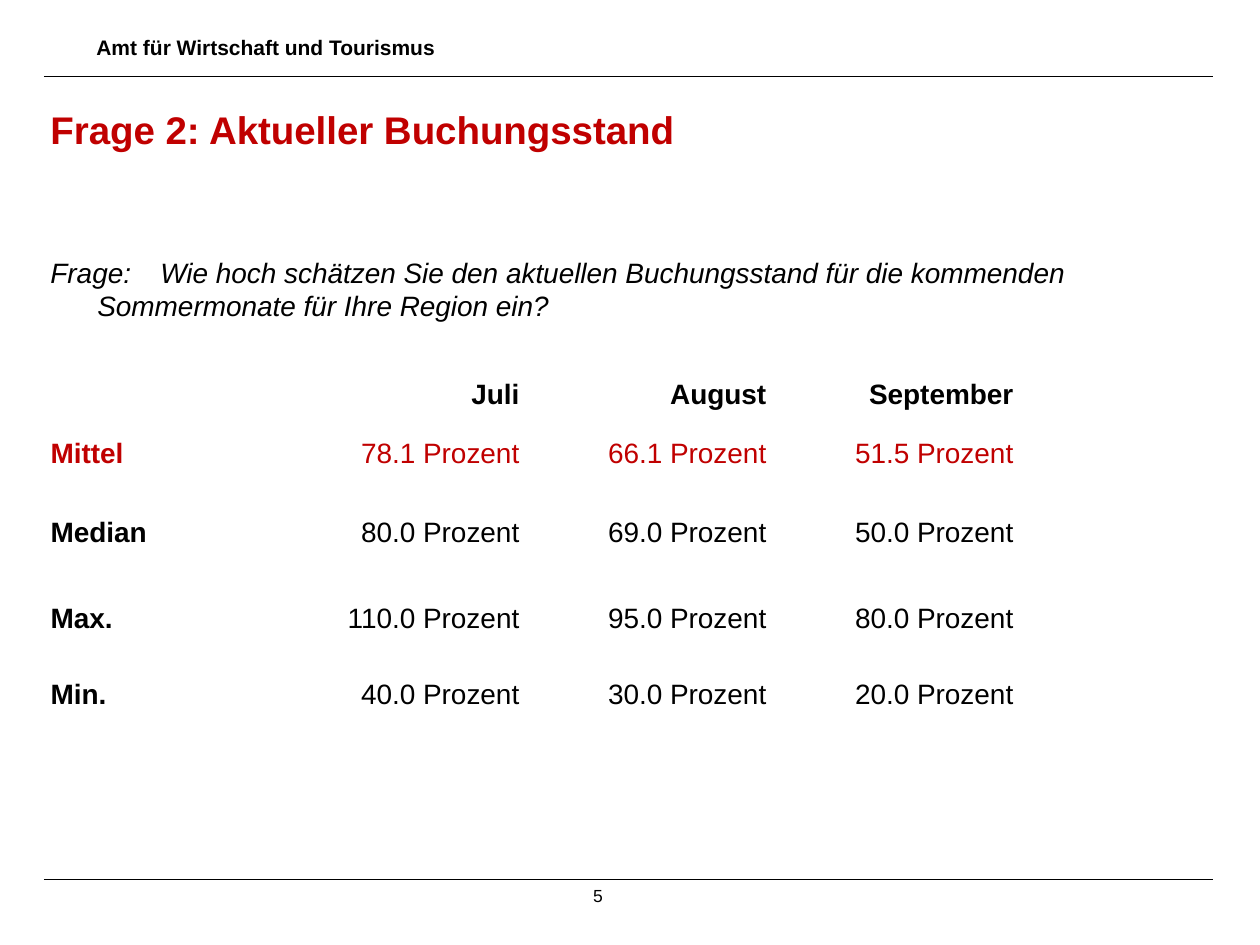
from lxml import etree
from pptx import Presentation, util as u
from pptx.dml.color import RGBColor
from pptx.enum import shapes, text
from pptx.oxml.ns import qn

SCALE = 914400 // 126
BLACK, RED = "000000", "C00000"
LEFT, WIDTH = 38, 1168
MONTHS = ["", "Juli", "August", "September"]
STATS = [
    ("Mittel", "78.1", "66.1", "51.5"),
    ("Median", "80.0", "69.0", "50.0"),
    ("Max.", "110.0", "95.0", "80.0"),
    ("Min.", "40.0", "30.0", "20.0"),
]
HEIGHTS = [59, 79, 86, 76, 76]


def px(n):
    return u.Emu(n * SCALE)


def color(code):
    return RGBColor.from_string(code)


def add_run(para, words, size, tint=BLACK, bold=False, italic=False):
    run = para.add_run()
    run.text = words
    font = run.font
    font.name, font.size = "Arial", u.Pt(size)
    font.bold, font.italic = bold, italic
    font.color.rgb = color(tint)


def add_text(slide, box, words, size, anchor=text.MSO_ANCHOR.TOP, **style):
    """Add a wrapping one-paragraph text box and return the paragraph."""
    frame = slide.shapes.add_textbox(*map(px, box)).text_frame
    frame.word_wrap = True
    frame.vertical_anchor = anchor
    para = frame.paragraphs[0]
    add_run(para, words, size, **style)
    return para


def add_rule(slide, y):
    """Add a thin horizontal line across the slide."""
    line = slide.shapes.add_connector(
        shapes.MSO_CONNECTOR.STRAIGHT, px(44), px(y), px(1213), px(y))
    line.line.color.rgb = color(BLACK)
    line.line.width = u.Pt(0.25)
    etree.SubElement(line._element.spPr, qn("a:effectLst"))


def add_table(slide):
    rows = [MONTHS] + [
        [name] + [f"{value} Prozent" for value in values]
        for name, *values in STATS]
    table = slide.shapes.add_table(
        len(rows), len(MONTHS), px(LEFT), px(373),
        px(247 * len(MONTHS)), px(sum(HEIGHTS))).table
    table.first_row = table.horz_banding = False
    for col in table.columns:
        col.width = px(247)
    for r, row in enumerate(rows):
        table.rows[r].height = px(HEIGHTS[r])
        for c, words in enumerate(row):
            cell = table.cell(r, c)
            cell.fill.background()
            para = cell.text_frame.paragraphs[0]
            if c:
                para.alignment = text.PP_ALIGN.RIGHT
            if words:
                add_run(para, words, 16, RED if r == 1 else BLACK,
                        bold=r == 0 or c == 0)


def main():
    deck = Presentation()
    deck.slide_width, deck.slide_height = px(1260), px(945)
    slide = deck.slides.add_slide(deck.slide_layouts[6])

    add_rule(slide, 879)
    add_text(slide, (84, 28, 576, 38),
             "Amt für Wirtschaft und Tourismus", 12, bold=True)
    add_rule(slide, 76)
    add_text(slide, (LEFT, 100, WIDTH, 59), "Frage 2: Aktueller Buchungsstand",
             22, text.MSO_ANCHOR.MIDDLE, tint=RED, bold=True)
    query = add_text(
        slide, (LEFT, 249, WIDTH, 611),
        "Frage:\tWie hoch schätzen Sie den aktuellen Buchungsstand für die "
        "kommenden Sommermonate für Ihre Region ein?", 16, italic=True)
    props = query._p.get_or_add_pPr()
    props.set("marL", str(px(47)))
    props.set("indent", str(px(-47)))
    number = add_text(slide, (451, 879, 294, 66), "5", 10)
    number.alignment = text.PP_ALIGN.CENTER
    add_table(slide)
    deck.save("out.pptx")


if __name__ == "__main__":
    main()
